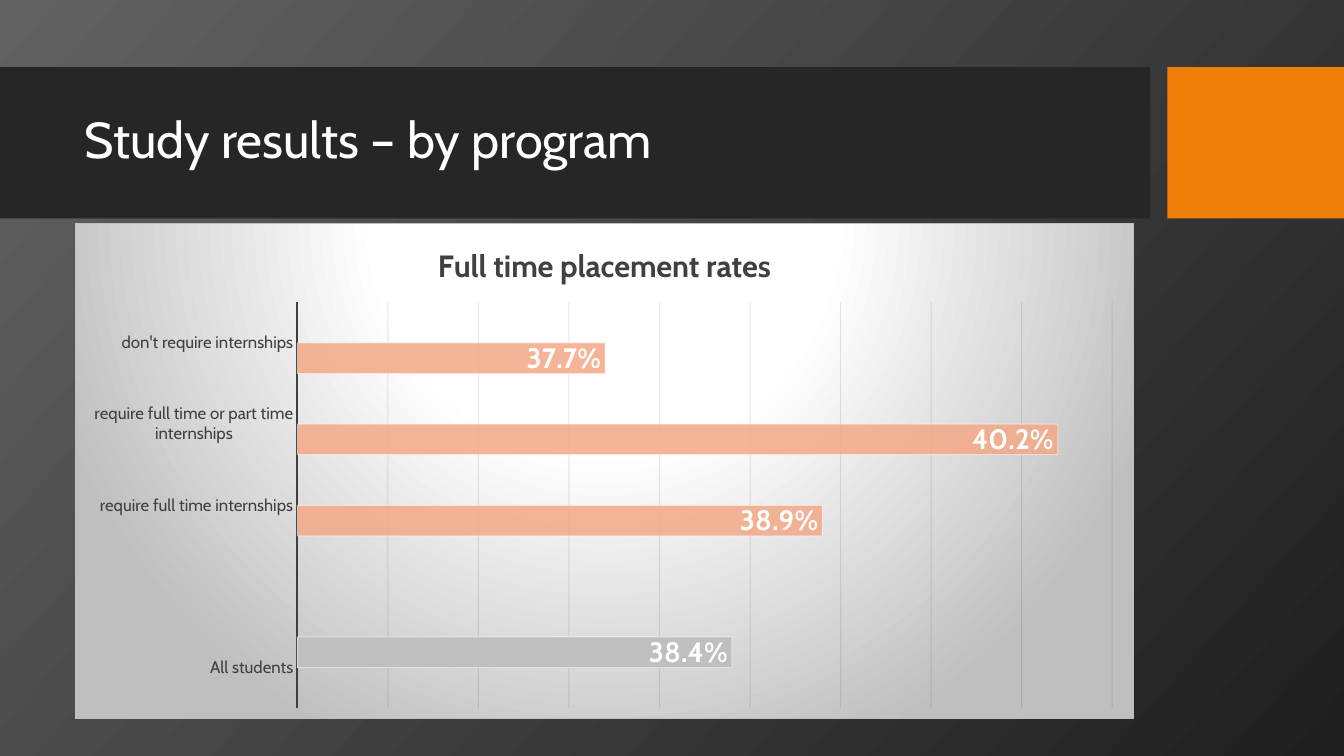
from lxml import etree
from pptx import Presentation
from pptx import util as u
from pptx.chart import data
from pptx.dml import color
from pptx.enum import chart as ch, shapes, text
from pptx.oxml import parse_xml
from pptx.oxml.ns import nsdecls, qn

TITLE = "Study results – by program"
CHART_TITLE = "Full time placement rates"
FONT = "Cabin"
WHITE = color.RGBColor(0xFF, 0xFF, 0xFF)
CHARCOAL = color.RGBColor(0x26, 0x26, 0x26)
ORANGE = color.RGBColor(0xF0, 0x7F, 0x09)
PEACH = color.RGBColor(0xF4, 0xA8, 0x87)
SILVER = color.RGBColor(0xBF, 0xBF, 0xBF)
INK = color.RGBColor(0x40, 0x40, 0x40)
GRID = color.RGBColor(0x0D, 0x0D, 0x0D)
BACKDROP = [color.RGBColor(0x62, 0x62, 0x62), color.RGBColor(0x1F, 0x1F, 0x1F)]

PROGRAMS = [
    ("All students", None, 0.384),
    ("", None, None),
    ("require full time internships", 0.389, None),
    ("require full time or part time internships", 0.402, None),
    ("don't require internships", 0.377, None),
]
SERIES = [("Series 1", PEACH), ("Series 2", SILVER)]
BANDS = [((0, 48, 821.5, 108), CHARCOAL), ((833.8, 48, 126.2, 108), ORANGE)]
TITLE_BOX = (53.3, 59, 756.7, 85)
CHART_BOX = (53.3, 159.1, 756.7, 354.3)
PLOT_AREA = {"x": 0.21, "y": 0.16, "w": 0.77, "h": 0.82}
ALPHAS = [
    (".//c:ser[1]/c:spPr/a:solidFill/a:srgbClr", 85),
    (".//c:ser/c:spPr/a:ln/a:solidFill/a:srgbClr", 50),
    (".//c:majorGridlines//a:srgbClr", 10),
]
CHART_FILL = f"""<c:spPr {nsdecls('c', 'a')}>
<a:gradFill><a:gsLst>
<a:gs pos="0"><a:srgbClr val="{WHITE}"/></a:gs>
<a:gs pos="39000"><a:srgbClr val="{WHITE}"/></a:gs>
<a:gs pos="100000"><a:srgbClr val="{SILVER}"/></a:gs>
</a:gsLst><a:path path="circle">
<a:fillToRect l="50000" t="-80000" r="50000" b="180000"/></a:path></a:gradFill>
<a:ln w="9525"><a:solidFill><a:srgbClr val="{SILVER}"/></a:solidFill></a:ln>
</c:spPr>"""


def assign(target, **values):
    for name, value in values.items():
        setattr(target, name, value)


def points(box):
    return [u.Pt(length) for length in box]


def style_font(font, size, rgb, bold=False):
    assign(font, name=FONT, size=u.Pt(size), bold=bold)
    font.color.rgb = rgb


def style_line(line, width, rgb):
    line.width = u.Pt(width)
    line.color.rgb = rgb


def draw_backdrop(slide):
    fill = slide.background.fill
    fill.gradient()
    fill.gradient_angle = 318
    for stop, rgb in zip(fill.gradient_stops, BACKDROP):
        stop.color.rgb = rgb


def draw_heading(slide):
    for box, rgb in BANDS:
        band = slide.shapes.add_shape(shapes.MSO_SHAPE.RECTANGLE, *points(box))
        band.shadow.inherit = False
        band.fill.solid()
        band.fill.fore_color.rgb = rgb
        band.line.fill.background()
    frame = slide.shapes.add_textbox(*points(TITLE_BOX)).text_frame
    assign(frame, word_wrap=True, vertical_anchor=text.MSO_ANCHOR.MIDDLE)
    heading = frame.paragraphs[0]
    heading.line_spacing = 0.9
    run = heading.add_run()
    run.text = TITLE
    style_font(run.font, 36, WHITE)


def draw_rates(slide):
    names, *columns = zip(*PROGRAMS)
    rates = data.CategoryChartData(number_format="0.0%")
    rates.categories = names
    for (name, _), values in zip(SERIES, columns):
        rates.add_series(name, values)
    chart = slide.shapes.add_chart(
        ch.XL_CHART_TYPE.BAR_CLUSTERED, *points(CHART_BOX), rates).chart
    assign(chart, has_legend=False, has_title=True)
    style_font(chart.font, 10, WHITE)
    caption = chart.chart_title.text_frame.paragraphs[0].add_run()
    caption.text = CHART_TITLE
    style_font(caption.font, 22, INK, True)

    plot = chart.plots[0]
    assign(plot, gap_width=65, overlap=0, vary_by_categories=False)
    for series, (_, rgb) in zip(plot.series, SERIES):
        series.format.fill.solid()
        series.format.fill.fore_color.rgb = rgb
        style_line(series.format.line, 0.75, WHITE)
        labels = series.data_labels
        assign(labels, show_value=True, number_format="0.0%",
               number_format_is_linked=False,
               position=ch.XL_LABEL_POSITION.INSIDE_END)
        style_font(labels.font, 20, WHITE, True)

    programs, scale = chart.category_axis, chart.value_axis
    no_tick = ch.XL_TICK_MARK.NONE
    assign(programs, major_tick_mark=no_tick, minor_tick_mark=no_tick)
    style_font(programs.tick_labels.font, 12, INK)
    style_line(programs.format.line, 1.5, INK)
    assign(scale, minimum_scale=0.36, maximum_scale=0.405, major_unit=0.005,
           has_major_gridlines=True, visible=False)
    style_line(scale.major_gridlines.format.line, 0.75, GRID)
    finish_chart(chart.element)


def finish_chart(root):
    for query, percent in ALPHAS:
        for node in root.xpath(query):
            etree.SubElement(node, qn("a:alpha")).set("val", str(percent * 1000))
    root.find(qn("c:chart")).addnext(parse_xml(CHART_FILL))
    area = root.xpath("c:chart/c:plotArea")[0]
    for old in area.findall(qn("c:layout")):
        area.remove(old)
    modes = '<c:layoutTarget val="inner"/><c:xMode val="edge"/><c:yMode val="edge"/>'
    sizes = "".join(f'<c:{key} val="{part}"/>' for key, part in PLOT_AREA.items())
    area.insert(0, parse_xml(
        f'<c:layout {nsdecls("c")}><c:manualLayout>{modes}{sizes}'
        '</c:manualLayout></c:layout>'))


def main():
    deck = Presentation()
    assign(deck, slide_width=u.Pt(960), slide_height=u.Pt(540))
    slide = deck.slides.add_slide(deck.slide_layouts[6])
    draw_backdrop(slide)
    draw_heading(slide)
    draw_rates(slide)
    deck.save("out.pptx")


if __name__ == "__main__":
    main()
